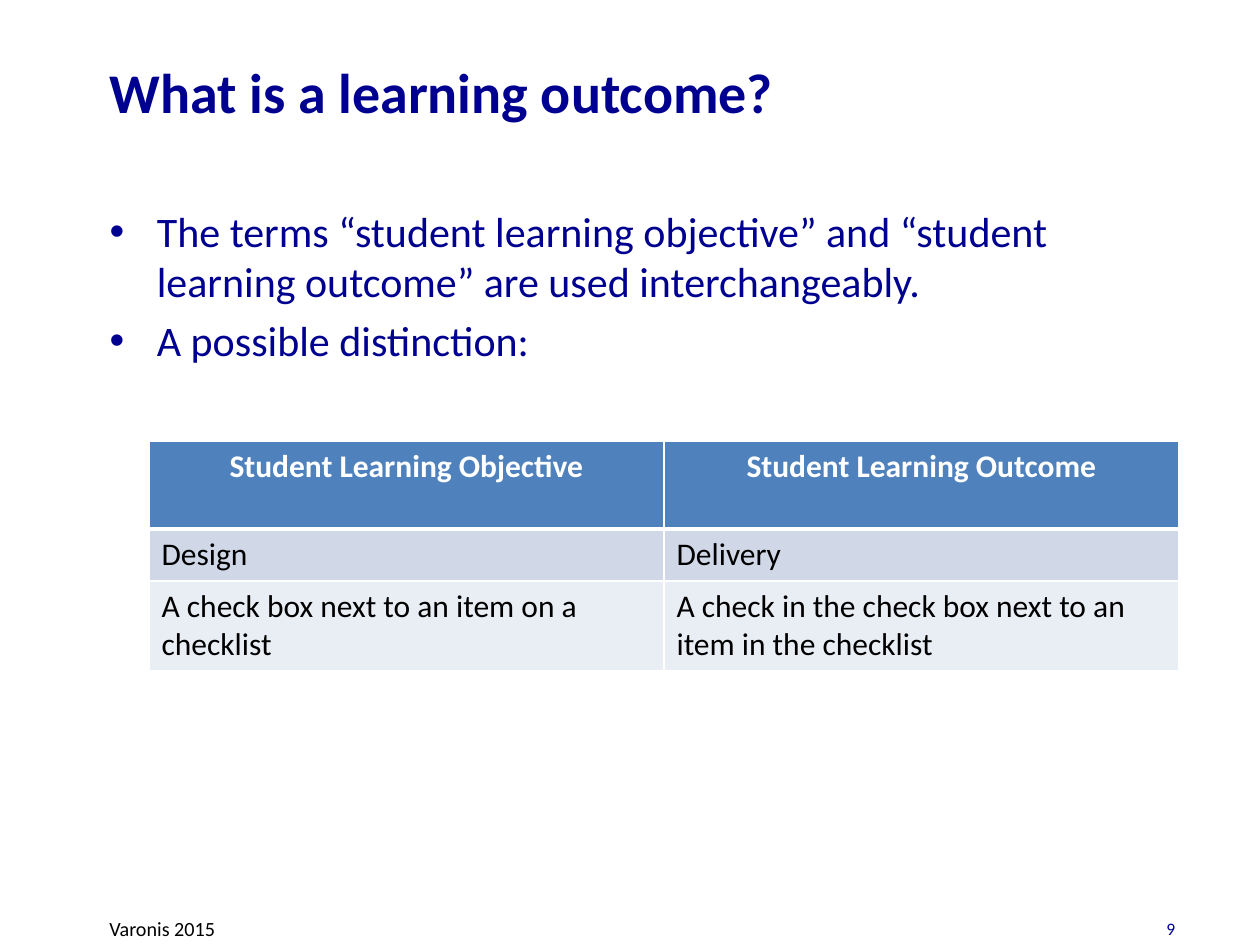
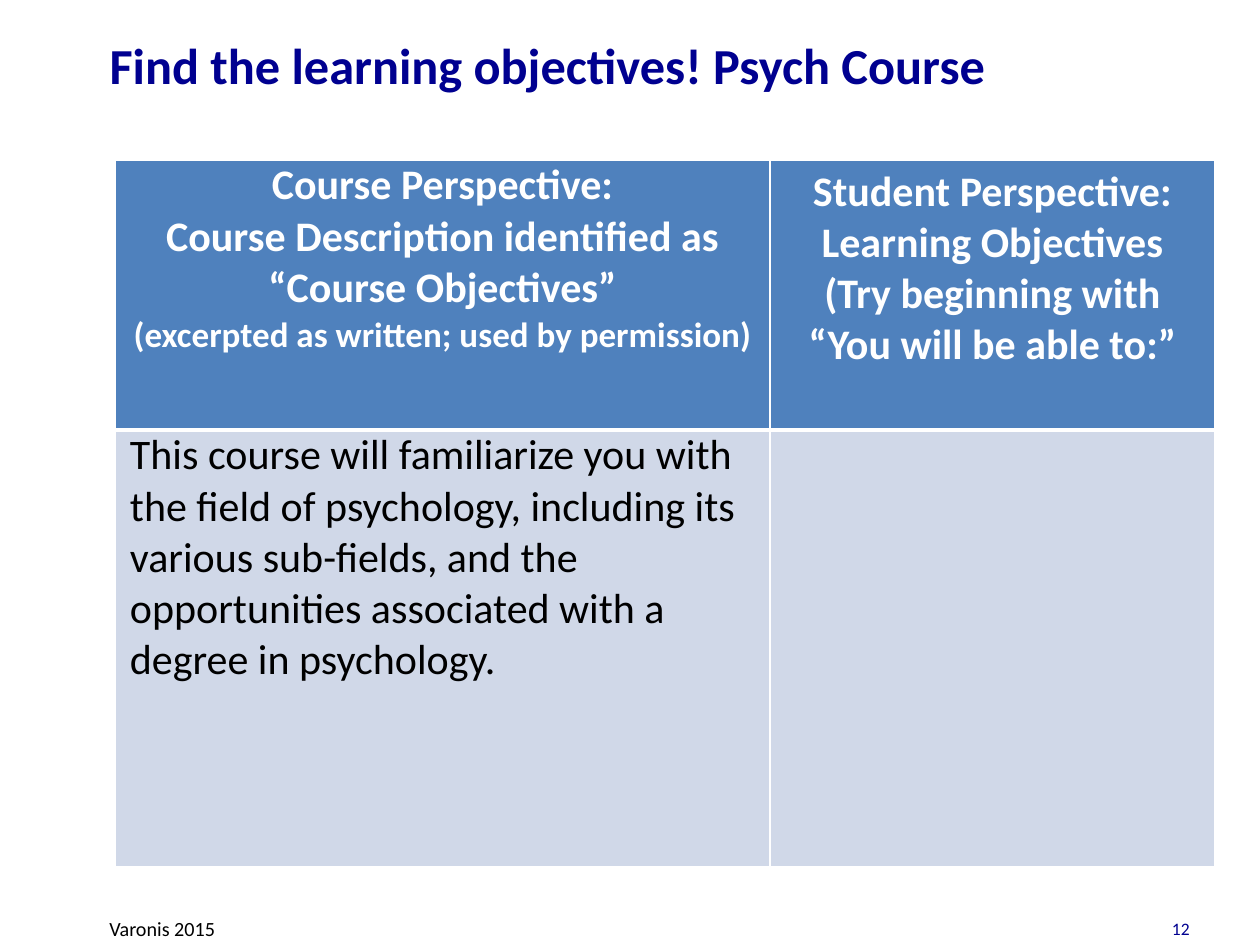
from dataclasses import dataclass

from lxml.etree import SubElement
from pptx import Presentation
from pptx.dml.color import RGBColor
from pptx.enum.text import MSO_ANCHOR, MSO_AUTO_SIZE, PP_ALIGN
from pptx.oxml.ns import qn
from pptx.util import Emu, Pt


@dataclass(frozen=True)
class Theme:
    font: str = "Calibri"
    navy: str = "000090"
    black: str = "000000"
    white: str = "FFFFFF"
    header: str = "4F81BD"
    bands: tuple = ("D0D8E8", "E9EDF4")
    title: float = 32
    long_title: float = 28.8
    large: float = 24
    remark: float = 20
    table: float = 18
    footer: float = 11.5
    page: float = 10
    thin: float = 1
    thick: float = 3


THEME = Theme()
TITLE_SIZE = (1163, 116)
MARGIN_LEFT = 97
FOOTER_BOX = (MARGIN_LEFT, 910, 1057, 36)
PAGE_BOX = (1154, 911, 48, 34)


def px(length):
    return Emu(round(length * 914400 / 126))


def place(shape, box):
    shape.left, shape.top, shape.width, shape.height = map(px, box)


def style(paragraph, size, color, bold=False, align=PP_ALIGN.LEFT):
    paragraph.alignment = align
    for run in paragraph.runs:
        run.font.name = THEME.font
        run.font.size = Pt(size)
        run.font.bold = bold
        run.font.color.rgb = RGBColor.from_string(color)


def add_title(slide, text, top, size):
    title = slide.shapes.title
    place(title, (MARGIN_LEFT, top, *TITLE_SIZE))
    frame = title.text_frame
    frame.text = text
    frame.auto_size = MSO_AUTO_SIZE.NONE
    frame.vertical_anchor = MSO_ANCHOR.MIDDLE
    style(frame.paragraphs[0], size, THEME.navy, bold=True)


def add_bullets(slide, box, points):
    body = slide.placeholders[1]
    place(body, box)
    frame = body.text_frame
    frame.text = "\n".join(points)
    frame.auto_size = MSO_AUTO_SIZE.NONE
    for index, paragraph in enumerate(frame.paragraphs):
        paragraph.space_before = Pt(0.2 * THEME.large if index else 0)
        style(paragraph, THEME.large, THEME.navy)


def add_label(slide, box, text, size, color, align, anchor):
    label = slide.shapes.add_textbox(*map(px, box))
    frame = label.text_frame
    frame.word_wrap = True
    frame.vertical_anchor = anchor
    frame.text = text
    style(frame.paragraphs[0], size, color, align=align)


def add_footer(slide, page, page_align):
    add_label(slide, FOOTER_BOX, "Varonis 2015", THEME.footer, THEME.black,
              PP_ALIGN.LEFT, MSO_ANCHOR.TOP)
    add_label(slide, PAGE_BOX, page, THEME.page, THEME.navy,
              page_align, MSO_ANCHOR.MIDDLE)


def set_borders(cell, row):
    widths = {
        "a:lnL": THEME.thin,
        "a:lnR": THEME.thin,
        "a:lnT": THEME.thick if row == 1 else THEME.thin,
        "a:lnB": THEME.thick if row == 0 else THEME.thin,
    }
    properties = cell._tc.get_or_add_tcPr()
    for edge, width in widths.items():
        line = SubElement(properties, qn(edge), w=str(Pt(width)))
        fill = SubElement(line, qn("a:solidFill"))
        SubElement(fill, qn("a:srgbClr"), val=THEME.white)


def fill_cell(cell, row, text, size):
    is_header = row == 0
    set_borders(cell, row)
    cell.fill.solid()
    background = THEME.header if is_header else THEME.bands[(row - 1) % 2]
    cell.fill.fore_color.rgb = RGBColor.from_string(background)
    cell.text_frame.text = text
    for paragraph in cell.text_frame.paragraphs:
        style(paragraph, size, THEME.white if is_header else THEME.black,
              bold=is_header,
              align=PP_ALIGN.CENTER if is_header else PP_ALIGN.LEFT)


def add_comparison(slide, origin, widths, heights, rows, size):
    box = (*origin, sum(widths), sum(heights))
    table = slide.shapes.add_table(len(heights), len(widths), *map(px, box)).table
    for column, width in zip(table.columns, widths):
        column.width = px(width)
    for index, (height, texts) in enumerate(zip(heights, rows)):
        table.rows[index].height = px(height)
        for cell, text in zip(table.rows[index].cells, texts):
            fill_cell(cell, index, text, size)
    return table


def build_definition(deck):
    slide = deck.slides.add_slide(deck.slide_layouts[1])
    add_title(slide, "What is a learning outcome?", 33, THEME.title)
    add_bullets(slide, (MARGIN_LEFT, 199, 1100, 645), (
        "The terms “student learning objective” and “student learning outcome” "
        "are used interchangeably.",
        "A possible distinction:",
    ))
    add_comparison(slide, (149, 441), (515, 515), (88, 52, 89), (
        ("Student Learning Objective", "Student Learning Outcome"),
        ("Design", "Delivery"),
        ("A check box next to an item on a checklist",
         "A check in the check box next to an item in the checklist"),
    ), THEME.table)
    add_footer(slide, "9", PP_ALIGN.LEFT)


def build_exercise(deck):
    slide = deck.slides.add_slide(deck.slide_layouts[5])
    add_title(slide, "Find the learning objectives! Psych Course", 6,
              THEME.long_title)
    perspectives = add_comparison(slide, (115, 160), (655, 445), (270, 437), (
        ("Course Perspective:\n"
         "Course Description identified as “Course Objectives”\n"
         "(excerpted as written; used by permission)",
         "Student Perspective:\n"
         "Learning Objectives\n"
         "(Try beginning with “You will be able to:”"),
        ("This course will familiarize you with the field of psychology, "
         "including its various sub-fields, and the opportunities associated "
         "with a degree in psychology.", ""),
    ), THEME.large)
    for row in perspectives.rows:
        course = row.cells[0]
        course.margin_left = course.margin_right = px(15)
        course.margin_top = course.margin_bottom = 0
    permission = perspectives.cell(0, 0).text_frame.paragraphs[-1]
    style(permission, THEME.remark, THEME.white, bold=True, align=PP_ALIGN.CENTER)
    add_footer(slide, "12", PP_ALIGN.RIGHT)


def main():
    deck = Presentation()
    deck.slide_width, deck.slide_height = px(1260), px(945)
    build_definition(deck)
    build_exercise(deck)
    deck.save("out.pptx")


if __name__ == "__main__":
    main()
